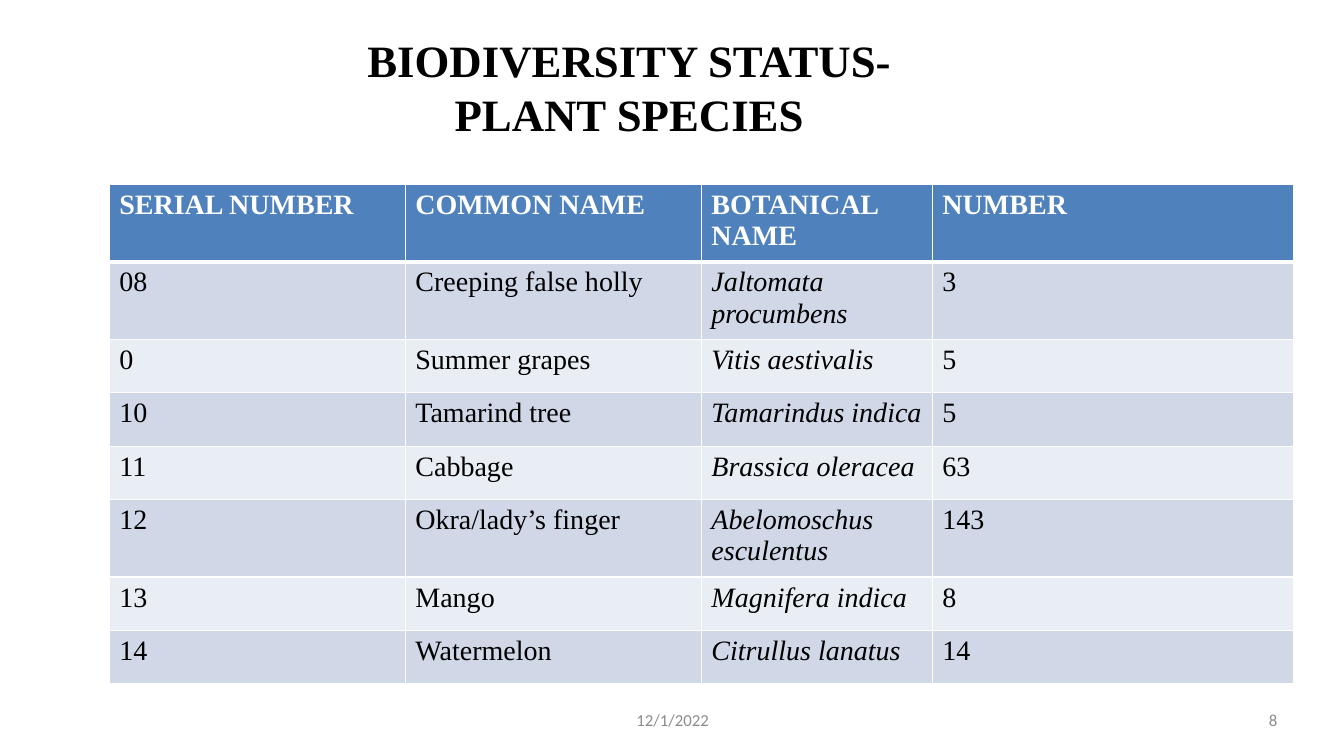
from lxml.etree import SubElement
from pptx import Presentation
from pptx.dml.color import RGBColor
from pptx.enum.text import MSO_ANCHOR as Anchor, PP_ALIGN as Align
from pptx.oxml.ns import qn
from pptx.util import Pt

COLORS = {
    "text": "000000",
    "white": "FFFFFF",
    "footer": "8C8C8C",
    "header": "4F81BD",
    "odd_row": "D0D8E8",
    "even_row": "E9EDF4",
}
HEADINGS = ("SERIAL NUMBER", "COMMON NAME", "BOTANICAL NAME", "NUMBER")
PLANTS = [
    ("08", "Creeping false holly", "Jaltomata procumbens", "3"),
    ("0", "Summer grapes", "Vitis aestivalis", "5"),
    ("10", "Tamarind tree", "Tamarindus indica", "5"),
    ("11", "Cabbage", "Brassica oleracea", "63"),
    ("12", "Okra/lady’s finger", "Abelomoschus esculentus", "143"),
    ("13", "Mango", "Magnifera indica", "8"),
    ("14", "Watermelon", "Citrullus lanatus", "14"),
]
COLUMN_WIDTHS = (211.5, 211.5, 165, 258)
BOTANICAL_COLUMN = HEADINGS.index("BOTANICAL NAME")


class SlideBuilder:
    serif = "Times New Roman"
    sans = "Calibri"

    def __init__(self, presentation):
        self.slide = presentation.slides.add_slide(presentation.slide_layouts[5])

    def style(self, paragraph, name, size, color, bold=False, italic=False):
        font = paragraph.font
        font.name, font.size = name, Pt(size)
        font.bold, font.italic = bold, italic
        font.color.rgb = RGBColor.from_string(COLORS[color])

    def frame(self, shape, text, align):
        text_frame = shape.text_frame
        text_frame.text = text
        text_frame.word_wrap = True
        text_frame.vertical_anchor = Anchor.MIDDLE
        text_frame.margin_left = text_frame.margin_right = 0
        text_frame.margin_top = text_frame.margin_bottom = 0
        paragraph = text_frame.paragraphs[0]
        paragraph.alignment = align
        return paragraph

    def title(self, text, left, top, width, height):
        shape = self.slide.shapes.title
        shape.left, shape.top = Pt(left), Pt(top)
        shape.width, shape.height = Pt(width), Pt(height)
        paragraph = self.frame(shape, text, Align.CENTER)
        paragraph.space_before = Pt(1)
        self.style(paragraph, self.serif, 32, "text", bold=True)

    def footer(self, text, left, width, align):
        shape = self.slide.shapes.add_textbox(Pt(left), Pt(509), Pt(width), Pt(12.4))
        paragraph = self.frame(shape, text, align)
        paragraph.line_spacing = Pt(12.4)
        self.style(paragraph, self.sans, 12, "footer")

    def borders(self, cell, bottom):
        properties = cell._tc.get_or_add_tcPr()
        widths = {"a:lnL": 1, "a:lnR": 1, "a:lnT": 1, "a:lnB": bottom}
        for tag, width in widths.items():
            line = SubElement(properties, qn(tag), w=str(Pt(width)))
            fill = SubElement(line, qn("a:solidFill"))
            SubElement(fill, qn("a:srgbClr"), val=COLORS["white"])

    def cell(self, cell, text, fill, color, bottom=1, bold=False, italic=False):
        self.borders(cell, bottom)
        cell.fill.solid()
        cell.fill.fore_color.rgb = RGBColor.from_string(COLORS[fill])
        cell.text = text
        self.style(cell.text_frame.paragraphs[0], self.serif, 20, color, bold, italic)

    def table(self, headings, rows, widths, left, top, row_height):
        count = len(rows) + 1
        table = self.slide.shapes.add_table(
            count, len(headings), Pt(left), Pt(top),
            Pt(sum(widths)), Pt(row_height * count)).table
        for column, width in zip(table.columns, widths):
            column.width = Pt(width)
        for row in table.rows:
            row.height = Pt(row_height)
        for column, heading in enumerate(headings):
            self.cell(table.cell(0, column), heading, "header", "white",
                      bottom=3, bold=True)
        for number, values in enumerate(rows, 1):
            fill = "odd_row" if number % 2 else "even_row"
            for column, value in enumerate(values):
                self.cell(table.cell(number, column), value, fill, "text",
                          bottom=1, italic=column == BOTANICAL_COLUMN)


def main():
    presentation = Presentation()
    presentation.slide_width, presentation.slide_height = Pt(960), Pt(540)
    builder = SlideBuilder(presentation)
    builder.title("BIODIVERSITY STATUS-PLANT SPECIES", 213, 22.5, 473, 78.5)
    builder.footer("12/1/2022", 328.5, 304, Align.CENTER)
    builder.footer("8", 688.5, 224, Align.RIGHT)
    builder.table(HEADINGS, PLANTS, COLUMN_WIDTHS, 78, 131.8, 38.2)
    presentation.save("out.pptx")


if __name__ == "__main__":
    main()
